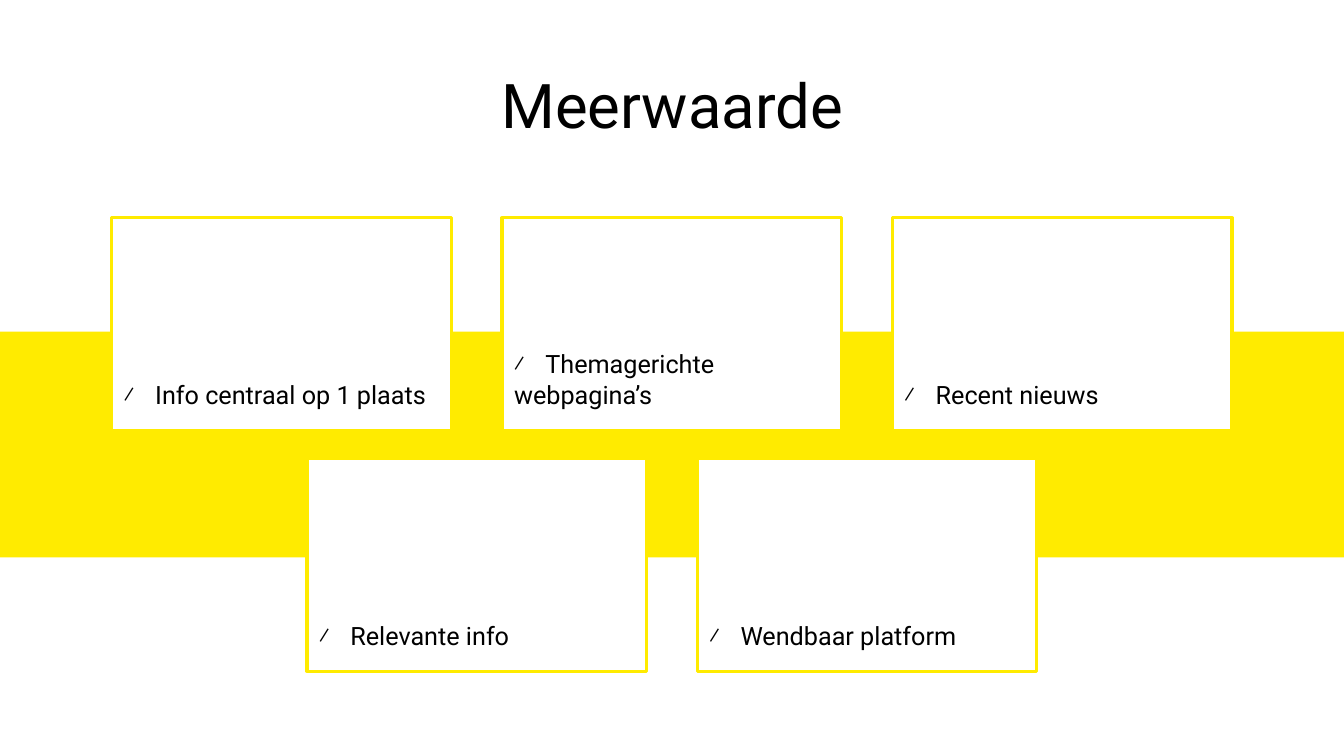
from lxml import etree
from pptx import Presentation
from pptx.dml.color import RGBColor
from pptx.enum import shapes, text
from pptx.oxml import ns
from pptx.util import Inches, Pt

COLORS = {"yellow": "FFEB00", "white": "FFFFFF", "black": "000000"}
FONT = "Roboto"
SLIDE_WIDTH, SLIDE_HEIGHT = 13.33, 7.5
CARD_WIDTH, CARD_HEIGHT, CARD_GAP = 3.37, 2.11, 0.5
CARD_ROWS = [
    (2.16, [["Info centraal op 1 plaats"],
            ["Themagerichte\u00a0", "webpagina’s"],
            ["Recent nieuws"]]),
    (4.55, [["Relevante info"], ["Wendbaar platform"]]),
]


def color(name):
    """Return the named colour."""
    return RGBColor.from_string(COLORS[name])


def add_run(paragraph, words, size):
    """Add one formatted run to a paragraph."""
    run = paragraph.add_run()
    run.text = words
    run.font.name = FONT
    run.font.size = Pt(size)
    run.font.color.rgb = color("black")


def set_frame(frame, anchor, margins):
    """Set wrapping, anchor and the left, top, right and bottom margins."""
    frame.word_wrap = True
    frame.auto_size = text.MSO_AUTO_SIZE.NONE
    frame.vertical_anchor = anchor
    (frame.margin_left, frame.margin_top,
     frame.margin_right, frame.margin_bottom) = map(Inches, margins)


def add_box(slide, box, fill, line=None):
    """Add a flat rectangle in the given box."""
    shape = slide.shapes.add_shape(shapes.MSO_SHAPE.RECTANGLE, *map(Inches, box))
    shape.shadow.inherit = False
    shape.fill.solid()
    shape.fill.fore_color.rgb = color(fill)
    if line:
        shape.line.color.rgb = color(line)
        shape.line.width = Pt(2.25)
    else:
        shape.line.fill.background()
    return shape


def add_bullet(paragraph):
    """Give a paragraph a hanging slash bullet."""
    properties = paragraph._p.get_or_add_pPr()
    properties.set("marL", str(Inches(0.31)))
    properties.set("indent", str(-Inches(0.31)))
    for tag, name, value in (("a:buSzPct", "val", "90000"),
                             ("a:buFont", "typeface", FONT),
                             ("a:buChar", "char", "⁄")):
        etree.SubElement(properties, ns.qn(tag)).set(name, value)


def add_card(slide, box, lines):
    """Add a card whose first line carries the bullet."""
    frame = add_box(slide, box, "white", "yellow").text_frame
    set_frame(frame, text.MSO_ANCHOR.BOTTOM, (0.12, 0, 0.12, 0.2))
    for index, line in enumerate(lines):
        if index:
            paragraph = frame.add_paragraph()
            paragraph.space_before = Pt(3)
        else:
            paragraph = frame.paragraphs[0]
            add_bullet(paragraph)
        paragraph.alignment = text.PP_ALIGN.LEFT
        paragraph.line_spacing = 0.9
        add_run(paragraph, line, 18)


def add_card_row(slide, top, cards):
    """Add a row of cards centred on the slide."""
    step = CARD_WIDTH + CARD_GAP
    left = (SLIDE_WIDTH - len(cards) * step + CARD_GAP) / 2
    for index, lines in enumerate(cards):
        add_card(slide, (left + index * step, top, CARD_WIDTH, CARD_HEIGHT), lines)


def set_title(slide, box, words):
    """Place and fill the title placeholder."""
    title = slide.shapes.title
    title.left, title.top, title.width, title.height = map(Inches, box)
    set_frame(title.text_frame, text.MSO_ANCHOR.MIDDLE, (0, 0, 0, 0))
    paragraph = title.text_frame.paragraphs[0]
    paragraph.alignment = text.PP_ALIGN.CENTER
    paragraph.line_spacing = Pt(38)
    add_run(paragraph, words, 44)


def main():
    """Build and save the presentation."""
    presentation = Presentation()
    presentation.slide_width = Inches(SLIDE_WIDTH)
    presentation.slide_height = Inches(SLIDE_HEIGHT)
    slide = presentation.slides.add_slide(presentation.slide_layouts[5])
    set_title(slide, (0.41, 0.47, 12.52, 1.33), "Meerwaarde")
    add_box(slide, (0, 3.29, SLIDE_WIDTH, 2.24), "yellow")
    for top, cards in CARD_ROWS:
        add_card_row(slide, top, cards)
    presentation.save("out.pptx")


if __name__ == "__main__":
    main()
